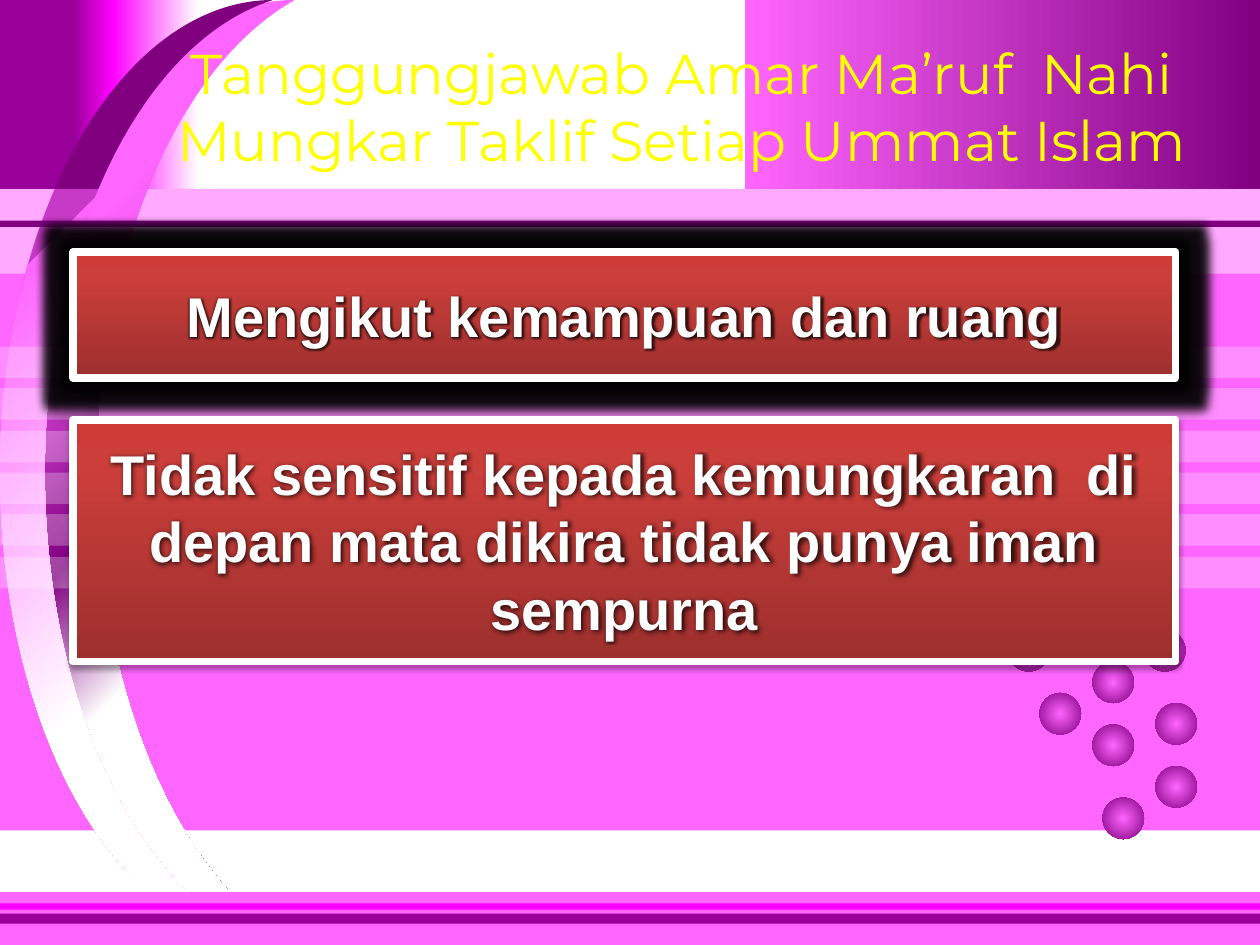
from lxml import etree
from pptx import Presentation
from pptx.dml.color import RGBColor
from pptx.enum import shapes, text
from pptx.oxml import ns, parse_xml
from pptx.util import Inches, Pt

COLORS = {
    "pink": "FF66FF", "magenta": "FF00FF", "violet": "990099", "purple": "800080",
    "white": "FFFFFF", "yellow": "FFFF00", "black": "000000",
    "dark_red": "9C2F2D", "red": "CB3E3A", "light_red": "CE3B37",
}
SHAPE = shapes.MSO_SHAPE
LINEAR = '<a:lin ang="{}" scaled="0"/>'
RADIAL = ('<a:path path="circle"><a:fillToRect l="50000" t="50000" '
          'r="50000" b="50000"/></a:path>')


def rgb(name):
    return RGBColor.from_string(COLORS[name])


def color_xml(name, alpha=100):
    return (f'<a:srgbClr val="{COLORS[name]}">'
            f'<a:alpha val="{alpha * 1000}"/></a:srgbClr>')


def shadow_xml(alpha, blur, distance, angle, color="black"):
    return (f'<a:outerShdw blurRad="{Pt(blur)}" dist="{Pt(distance)}" '
            f'dir="{angle * 60000}" algn="tl" rotWithShape="0">'
            f'{color_xml(color, alpha)}</a:outerShdw>')


def glow_xml(radius, alpha):
    return f'<a:glow rad="{Pt(radius)}">{color_xml("black", alpha)}</a:glow>'


def effects(content):
    return parse_xml(f'<a:effectLst {ns.nsdecls("a")}>{content}</a:effectLst>')


def add_plain(parent, kind, left, top, width, height):
    shape = parent.add_shape(kind, Inches(left), Inches(top),
                             Inches(width), Inches(height))
    shape.shadow.inherit = False
    shape.line.fill.background()
    return shape


def fill_solid(shape, color, alpha=100):
    shape.fill.solid()
    shape.fill.fore_color.rgb = rgb(color)
    if alpha < 100:
        swatch = shape.element.spPr.find(f'{ns.qn("a:solidFill")}/{ns.qn("a:srgbClr")}')
        etree.SubElement(swatch, ns.qn("a:alpha"), val=str(alpha * 1000))


def fill_gradient(shape, stops, angle=None):
    """Linear gradient at a clockwise angle, or radial without one."""
    direction = RADIAL if angle is None else LINEAR.format(angle * 60000)
    stop_list = "".join(f'<a:gs pos="{position * 1000}">{color_xml(color)}</a:gs>'
                        for position, color in stops)
    gradient = parse_xml(f'<a:gradFill {ns.nsdecls("a")} rotWithShape="1">'
                         f'<a:gsLst>{stop_list}</a:gsLst>{direction}</a:gradFill>')
    shape.fill.background()
    props = shape.element.spPr
    props.replace(props.find(ns.qn("a:noFill")), gradient)


def add_band(parent, top, height, color, alpha=100):
    band = add_plain(parent, SHAPE.RECTANGLE, 0, top, 10, height)
    fill_solid(band, color, alpha)


def add_header_block(parent, left, width, stops):
    block = add_plain(parent, SHAPE.RECTANGLE, left, 0, width, 1.5)
    fill_gradient(block, stops, 0)


def add_crescent(parent, left, thickness, stops):
    crescent = add_plain(parent, SHAPE.MOON, left, 0, 2.17, 7.5)
    crescent.adjustments[0] = thickness
    fill_gradient(crescent, stops, 45)


def add_bead(parent, left, top):
    bead = add_plain(parent, SHAPE.FLOWCHART_CONNECTOR, left, top, 0.33, 0.33)
    fill_gradient(bead, [(0, "pink"), (100, "purple")])


def write_text(frame, wording, font, color, bold, effect):
    frame.word_wrap = True
    paragraph = frame.paragraphs[0]
    paragraph.alignment = text.PP_ALIGN.CENTER
    run = paragraph.add_run()
    run.text = wording
    run.font.size = Pt(32)
    run.font.name = font
    run.font.bold = bold
    run.font.color.rgb = rgb(color)
    run.font.fill._xPr.find(ns.qn("a:solidFill")).addnext(effects(effect))


def add_statement(slide, top, height, wording, halo=""):
    box = add_plain(slide.shapes, SHAPE.RECTANGLE, 0.58, top, 8.75, height)
    fill_gradient(box, [(0, "dark_red"), (80, "red"), (100, "light_red")], 270)
    box.line.color.rgb = rgb("white")
    box.line.width = Pt(4.5)
    props = box.element.spPr
    props.replace(props.find(ns.qn("a:effectLst")),
                  effects(halo + shadow_xml(35, 3.1, 1.8, 90)))
    box.text_frame.vertical_anchor = text.MSO_ANCHOR.MIDDLE
    write_text(box.text_frame, wording, "Arial", "white", True,
               glow_xml(4, 70) + shadow_xml(65, 4, 3, 45))


def add_backdrop(slide):
    parts = slide.shapes.add_group_shape().shapes
    add_band(parts, 2.17, 4.42, "pink")
    add_header_block(parts, 1.83, 8.17, [(50, "white"), (50, "pink"), (100, "purple")])
    add_header_block(parts, 0, 2.42, [(24, "violet"), (37, "magenta"), (65, "white")])
    add_crescent(parts, 0.17, 0.274, [(24, "pink"), (50, "purple"), (65, "white")])
    add_crescent(parts, 0, 0.164, [(24, "purple"), (24, "pink"), (65, "white")])

    # Rules under the header and along the foot
    add_band(parts, 1.5, 0.67, "pink", 56)
    add_band(parts, 1.75, 0.05, "purple")
    add_band(parts, 7.08, 0.42, "pink")
    add_band(parts, 7.17, 0.05, "magenta")
    add_band(parts, 7.25, 0.08, "violet")

    # Pale stripes, a third of an inch apart
    for row in range(6):
        add_band(parts, round(2.75 + row / 3, 2), 0.25, "white", 26)

    # Scattered beads
    for left, top in [(9.08, 5), (8.5, 4.75), (8.67, 5.25), (8.25, 5.5), (8, 5),
                      (8.75, 6.33), (9.17, 5.58), (8.67, 5.75), (9.17, 6.08)]:
        add_bead(parts, left, top)


def add_title(slide, wording):
    title = slide.shapes.title
    title.left, title.top = Inches(0.83), Inches(0.25)
    title.width, title.height = Inches(9.17), Inches(1.18)
    write_text(title.text_frame, wording, "Montserrat", "yellow", False,
               shadow_xml(50, 3, 2, 45, "purple"))
    title.text_frame.auto_size = text.MSO_AUTO_SIZE.SHAPE_TO_FIT_TEXT
    # Bring the title in front of the backdrop
    slide.shapes.element.append(title.element)


def main():
    deck = Presentation()
    deck.slide_width, deck.slide_height = Inches(10), Inches(7.5)
    slide = deck.slides.add_slide(deck.slide_layouts[5])
    slide.background.fill.solid()
    slide.background.fill.fore_color.rgb = rgb("white")

    add_backdrop(slide)
    add_title(slide, "Tanggungjawab Amar Ma’ruf  Nahi Mungkar Taklif Setiap Ummat Islam")
    add_statement(slide, 2, 1, "Mengikut kemampuan dan ruang", glow_xml(11, 90))
    add_statement(slide, 3.33, 1.92, "Tidak sensitif kepada kemungkaran  di depan mata "
                                     "dikira tidak punya iman sempurna")
    deck.save("out.pptx")


if __name__ == "__main__":
    main()
